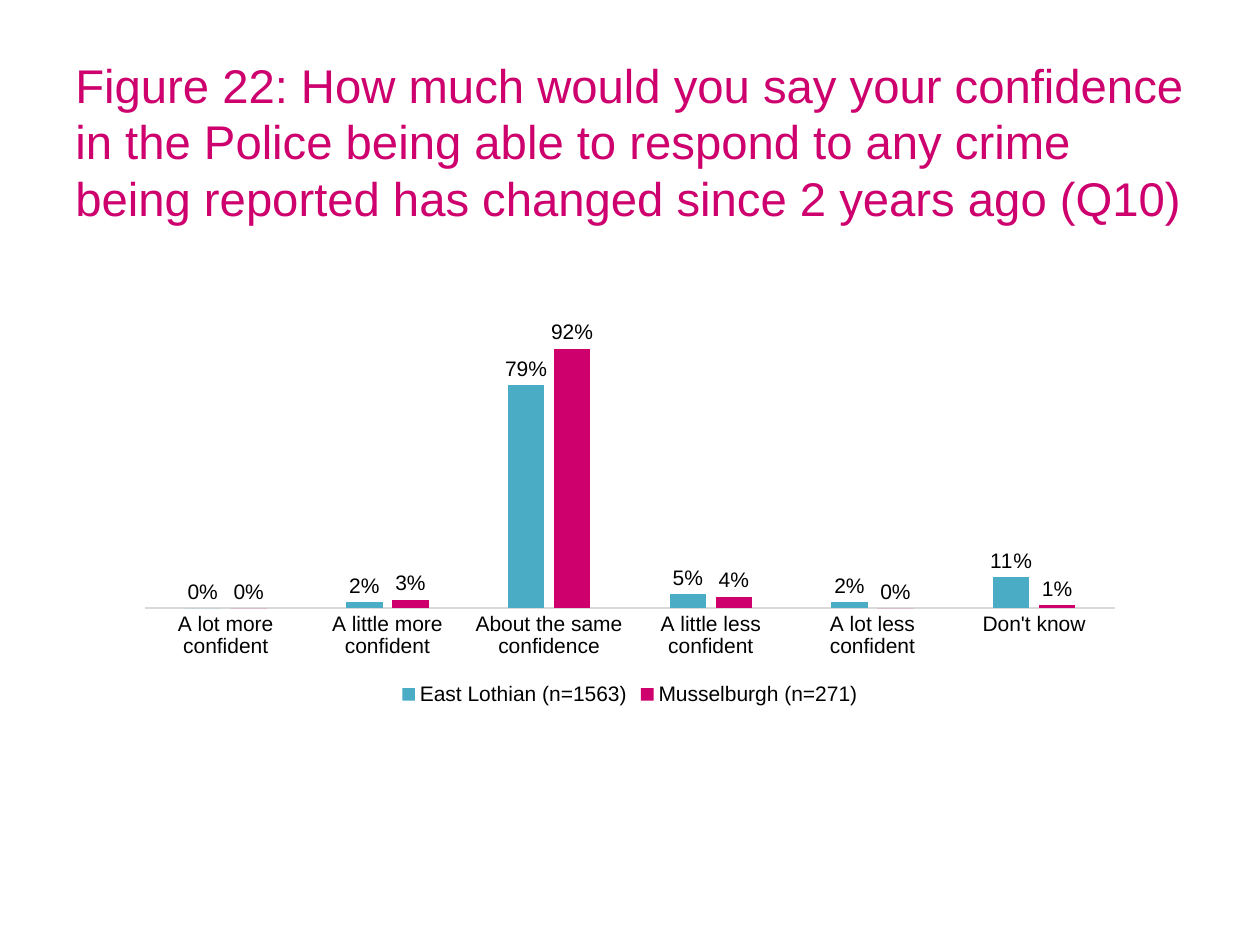
from pptx import Presentation
from pptx import util as u
from pptx.chart.data import CategoryChartData
from pptx.dml.color import RGBColor
from pptx.enum import chart as charts, text
from pptx.oxml import parse_xml
from pptx.oxml.ns import nsdecls, qn

TEAL, PINK, BLACK, GREY = "4BACC6", "CD006E", "000000", "D9D9D9"

CATEGORIES = ["A lot more confident", "A little more confident",
              "About the same confidence", "A little less confident",
              "A lot less confident", "Don't know"]
SERIES = [("East Lothian (n=1563)", [0, 0.02, 0.79, 0.05, 0.02, 0.11], TEAL),
          ("Musselburgh (n=271)", [0, 0.03, 0.92, 0.04, 0, 0.01], PINK)]


def colour(value):
    return RGBColor.from_string(value)


def set_plot_area(chart, x, y, w, h):
    """Fix the inner plot area, given as fractions of the chart."""
    area = chart.element.find(".//" + qn("c:plotArea"))
    for old in area.findall(qn("c:layout")):
        area.remove(old)
    sizes = "".join(f'<c:{tag} val="{value}"/>'
                    for tag, value in zip("xywh", (x, y, w, h)))
    area.insert(0, parse_xml(
        f'<c:layout {nsdecls("c")}><c:manualLayout><c:layoutTarget val="inner"/>'
        f'<c:xMode val="edge"/><c:yMode val="edge"/>{sizes}'
        '</c:manualLayout></c:layout>'))


class SlideBuilder:
    face = "Arial"

    def __init__(self, page):
        self.page = page

    def style(self, font, size, ink):
        font.name = self.face
        font.size = u.Pt(size)
        font.bold = False
        font.color.rgb = colour(ink)

    def title(self, words, x, y, w, h):
        box = self.page.shapes.add_textbox(*map(u.Inches, (x, y, w, h)))
        frame = box.text_frame
        frame.word_wrap = True
        frame.vertical_anchor = text.MSO_ANCHOR.MIDDLE
        span = frame.paragraphs[0].add_run()
        span.text = words
        self.style(span.font, 27, PINK)

    def column_chart(self, categories, series, x, y, w, h):
        data = CategoryChartData(number_format="0%")
        data.categories = categories
        for name, values, _ in series:
            data.add_series(name, values)
        chart = self.page.shapes.add_chart(
            charts.XL_CHART_TYPE.COLUMN_CLUSTERED,
            *map(u.Inches, (x, y, w, h)), data).chart
        self.style(chart.font, 12, BLACK)
        chart.has_title = False
        self.axes(chart)
        self.legend(chart)

        plot = chart.plots[0]
        plot.gap_width, plot.overlap = 219, -27
        plot.vary_by_categories = False
        for bars, (_, _, fill) in zip(plot.series, series):
            self.bars(bars, fill)
        return chart

    def axes(self, chart):
        value_axis = chart.value_axis
        value_axis.visible = False
        value_axis.has_major_gridlines = False
        value_axis.minimum_scale, value_axis.maximum_scale = 0, 1
        axis = chart.category_axis
        axis.major_tick_mark = charts.XL_TICK_MARK.NONE
        axis.format.line.color.rgb = colour(GREY)
        axis.format.line.width = u.Pt(0.75)
        self.style(axis.tick_labels.font, 12, BLACK)

    def legend(self, chart):
        chart.has_legend = True
        chart.legend.position = charts.XL_LEGEND_POSITION.BOTTOM
        chart.legend.include_in_layout = False
        self.style(chart.legend.font, 12, BLACK)

    def bars(self, bars, fill):
        bars.format.fill.solid()
        bars.format.fill.fore_color.rgb = colour(fill)
        bars.invert_if_negative = False
        labels = bars.data_labels
        labels.show_value = True
        labels.number_format = "0%"
        labels.number_format_is_linked = False
        labels.position = charts.XL_LABEL_POSITION.OUTSIDE_END
        self.style(labels.font, 12, BLACK)


def main():
    deck = Presentation()
    deck.slide_width, deck.slide_height = u.Inches(10), u.Inches(7.5)
    builder = SlideBuilder(deck.slides.add_slide(deck.slide_layouts[6]))
    builder.title("Figure 22: How much would you say your confidence in the "
                  "Police being able to respond to any crime being reported "
                  "has changed since 2 years ago (Q10)", 0.5, 0.3, 9, 1.64)
    chart = builder.column_chart(CATEGORIES, SERIES, 0.99, 2.25, 8.02, 3.39)
    set_plot_area(chart, 0.02, 0.1, 0.96, 0.66)
    deck.save("out.pptx")


if __name__ == "__main__":
    main()
